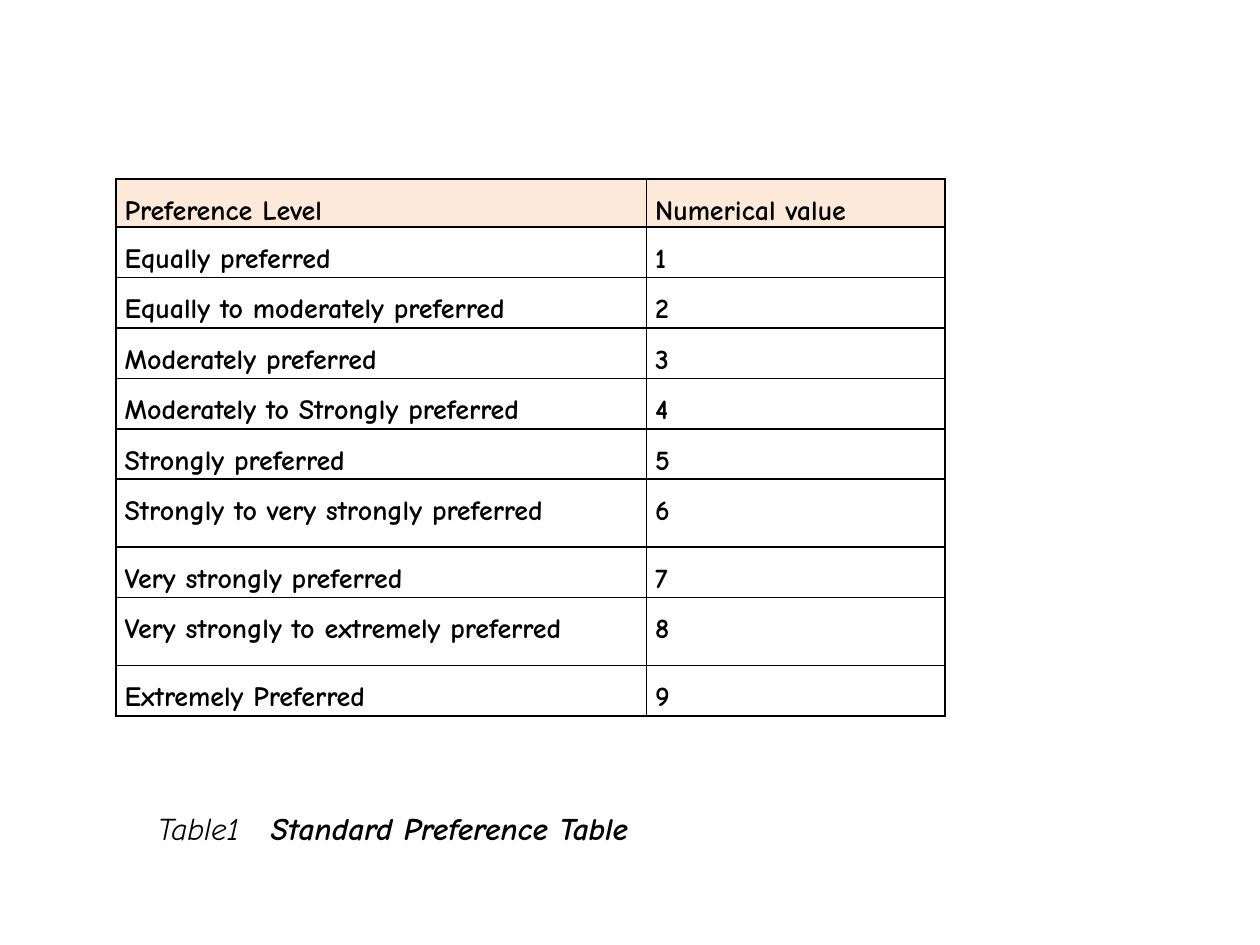
from lxml.etree import SubElement
from pptx import Presentation
from pptx.dml.color import RGBColor
from pptx.enum.text import MSO_ANCHOR, PP_ALIGN
from pptx.oxml.ns import qn
from pptx.util import Pt

# Content
HEADER = ("Preference Level", "Numerical value")
LEVELS = [
    "Equally preferred",
    "Equally to moderately preferred",
    "Moderately preferred",
    "Moderately to Strongly preferred",
    "Strongly preferred",
    "Strongly to very strongly preferred",
    "Very strongly preferred",
    "Very strongly to extremely preferred",
    "Extremely Preferred",
]
CAPTION_LABEL, CAPTION_TITLE = "Table1\t", "Standard Preference Table"

# Look and layout, in px at 100 to the inch
FONT = "Comic Neue"
BLACK = RGBColor(0x00, 0x00, 0x00)
PEACH = RGBColor(0xFD, 0xE9, 0xD9)
SLIDE_SIZE = (1000, 750)
TABLE_LEFT, TABLE_TOP = 92, 142
COLUMN_WIDTHS = (421, 237)
HEADER_HEIGHT, ROW_HEIGHT, TALL_HEIGHT = 38, 40, 54
TALL_ROWS = (6, 8)
CELL_MARGIN = 7
CAPTION_BOX = (125, 642, 542, 61)
CAPTION_TAB = 90


def px(length):
    return length * 9144


def add_text(paragraph, text, size, bold=False, italic=False):
    run = paragraph.add_run()
    run.text = text
    font = run.font
    font.name, font.size = FONT, Pt(size)
    font.bold, font.italic = bold, italic
    font.color.rgb = BLACK


def add_borders(cell):
    properties = cell._tc.get_or_add_tcPr()
    for side in ("lnL", "lnR", "lnT", "lnB"):
        line = SubElement(properties, qn(f"a:{side}"), w=str(Pt(1)))
        fill = SubElement(line, qn("a:solidFill"))
        SubElement(fill, qn("a:srgbClr"), val=str(BLACK))


def format_cell(cell, text, color=None):
    cell.margin_left = cell.margin_right = px(CELL_MARGIN)
    cell.margin_top = cell.margin_bottom = 0
    add_borders(cell)
    if color is None:
        cell.fill.background()
    else:
        cell.fill.solid()
        cell.fill.fore_color.rgb = color
    paragraph = cell.text_frame.paragraphs[0]
    paragraph.alignment = PP_ALIGN.JUSTIFY
    paragraph.line_spacing = 1.5
    paragraph.space_after = Pt(10)
    add_text(paragraph, text, 16, bold=True)


def add_preference_table(slide):
    rows = [HEADER] + [(level, str(value)) for value, level in enumerate(LEVELS, 1)]
    heights = [HEADER_HEIGHT] + [
        TALL_HEIGHT if value in TALL_ROWS else ROW_HEIGHT
        for value in range(1, len(rows))
    ]
    table = slide.shapes.add_table(
        len(rows), len(HEADER), px(TABLE_LEFT), px(TABLE_TOP),
        px(sum(COLUMN_WIDTHS)), px(sum(heights))).table
    table.first_row = table.horz_banding = False
    for column, width in zip(table.columns, COLUMN_WIDTHS):
        column.width = px(width)
    for i, (texts, height) in enumerate(zip(rows, heights)):
        table.rows[i].height = px(height)
        for j, text in enumerate(texts):
            format_cell(table.cell(i, j), text, PEACH if i == 0 else None)


def add_caption(slide):
    frame = slide.shapes.add_textbox(*map(px, CAPTION_BOX)).text_frame
    frame.word_wrap = True
    frame.vertical_anchor = MSO_ANCHOR.TOP
    frame.margin_left = frame.margin_right = 0
    frame.margin_top = frame.margin_bottom = 0
    paragraph = frame.paragraphs[0]
    # A tab stop sets the gap between label and title
    tabs = SubElement(paragraph._p.get_or_add_pPr(), qn("a:tabLst"))
    SubElement(tabs, qn("a:tab"), pos=str(px(CAPTION_TAB)), algn="l")
    add_text(paragraph, CAPTION_LABEL, 18, italic=True)
    add_text(paragraph, CAPTION_TITLE, 18, bold=True, italic=True)


def main():
    presentation = Presentation()
    presentation.slide_width, presentation.slide_height = map(px, SLIDE_SIZE)
    slide = presentation.slides.add_slide(presentation.slide_layouts[6])
    add_preference_table(slide)
    add_caption(slide)
    presentation.save("out.pptx")


if __name__ == "__main__":
    main()
